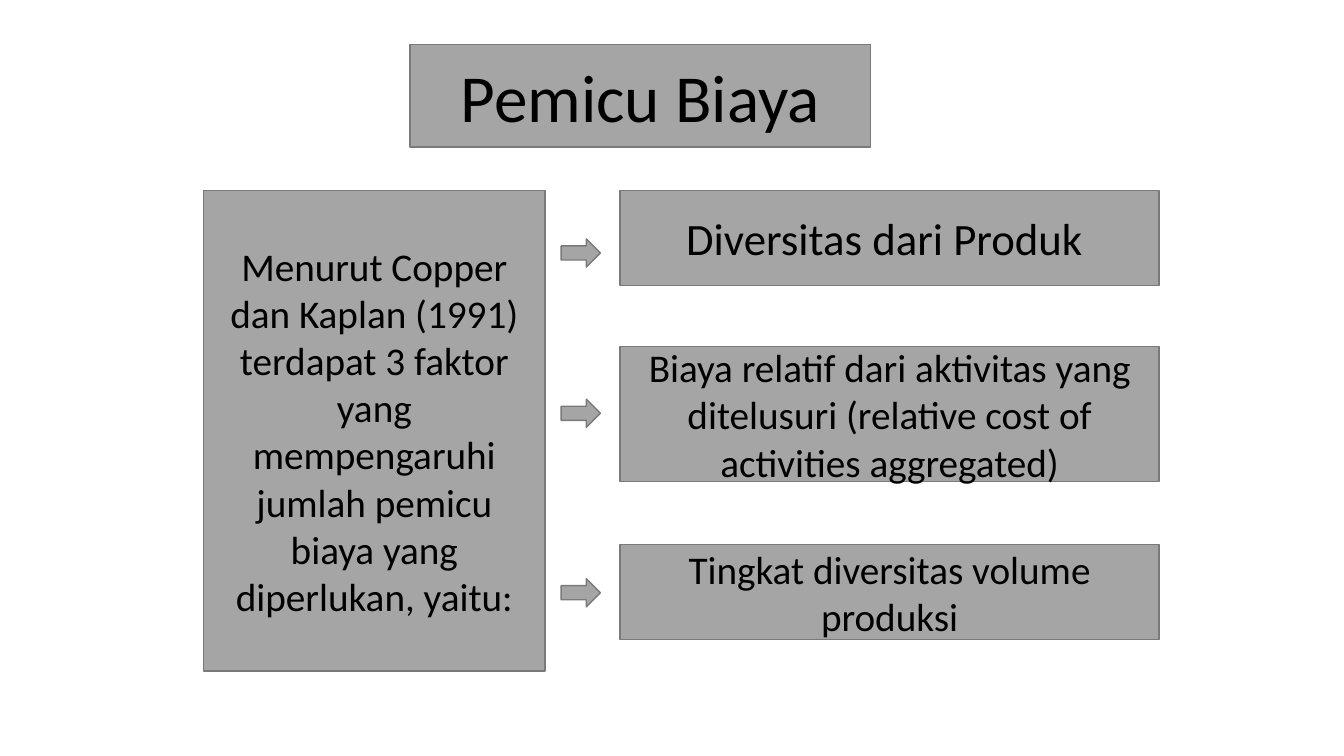
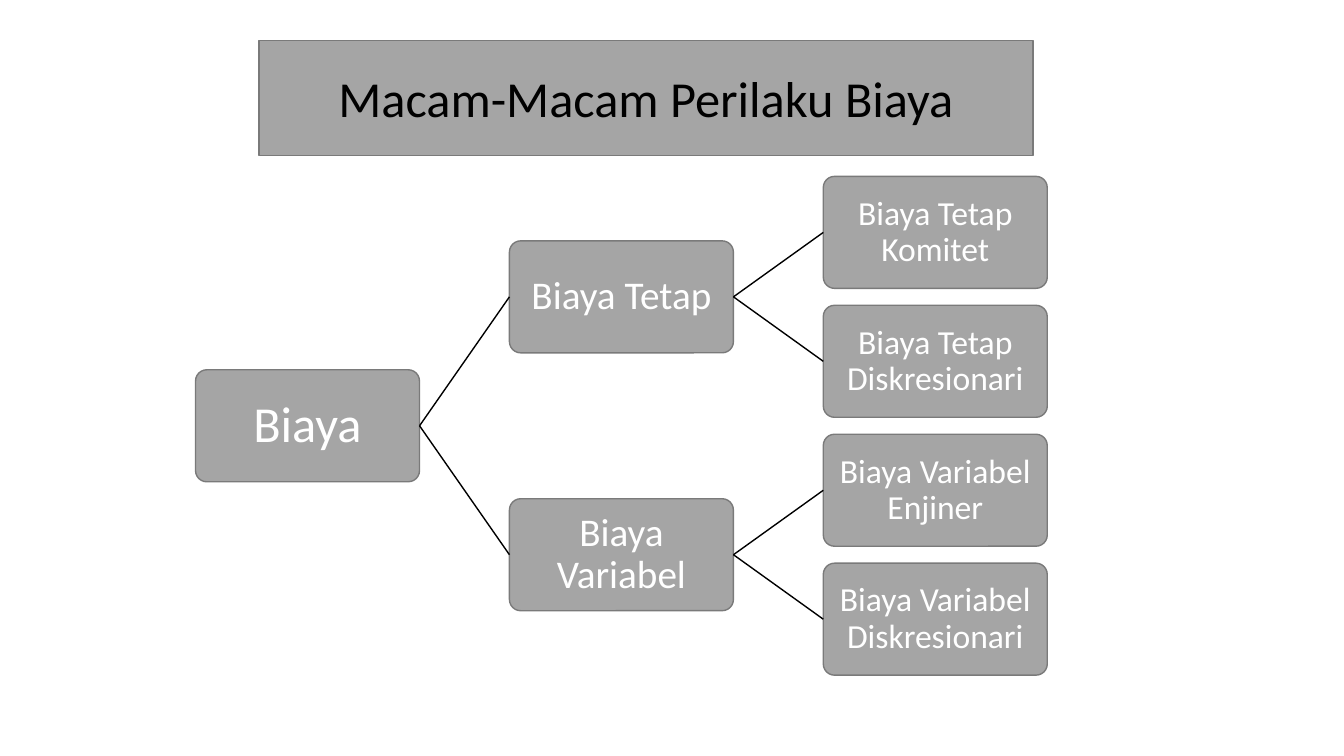
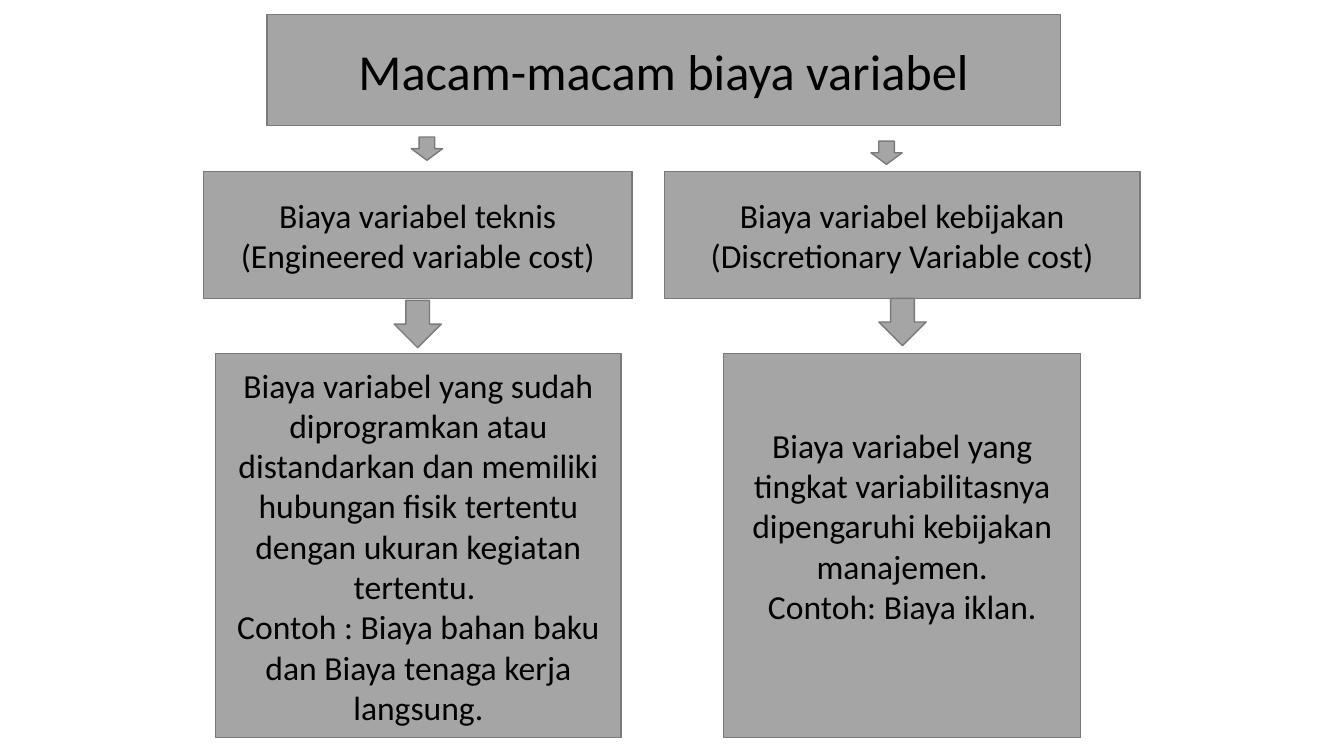
from lxml.etree import SubElement
from pptx import Presentation
from pptx.dml.color import RGBColor
from pptx.enum.shapes import MSO_CONNECTOR as LINK, MSO_SHAPE as FORM
from pptx.enum.text import MSO_ANCHOR as ANCHOR, MSO_AUTO_SIZE as FIT, PP_ALIGN as ALIGN
from pptx.oxml.ns import qn
from pptx.util import Pt

FONT = "Calibri"
HUES = {"fill": "A5A5A5", "edge": "7A7A7A", "dark": "000000", "light": "FFFFFF"}

# Slide 1: each factor is text, size, top, height and top of its arrow
INTRO = (
    "Menurut Copper dan Kaplan (1991) terdapat 3 faktor yang mempengaruhi "
    "jumlah pemicu biaya yang diperlukan, yaitu:"
)
FACTORS = [
    ("Diversitas dari Produk ", 32, 136, 68, 170.6),
    ("Biaya relatif dari aktivitas yang ditelusuri "
     "(relative cost of activities aggregated)", 28, 247.7, 96.5, 285.1),
    ("Tingkat diversitas volume produksi", 28, 388.8, 68, 413.3),
]

# Slide 2: each node is text and children
TREE = ("Biaya", [
    ("Biaya Tetap", [
        ("Biaya Tetap Komitet", []),
        ("Biaya Tetap Diskresionari", []),
    ]),
    ("Biaya Variabel", [
        ("Biaya Variabel Enjiner", []),
        ("Biaya Variabel Diskresionari", []),
    ]),
])
SIZES = [36, 28, 24]
NODE_W, NODE_H = 160, 80
TREE_X, TREE_Y = 139.7, 126
COL_STEP, ROW_STEP = 224.2, 92.1

# Slide 3: left and width of head and body, left and top of both arrows
KINDS = [
    {
        "head": "Biaya variabel teknis (Engineered variable cost)",
        "body": ["Biaya variabel yang sudah diprogramkan atau distandarkan dan "
                 "memiliki hubungan fisik tertentu dengan ukuran kegiatan tertentu. ",
                 "Contoh : Biaya bahan baku dan Biaya tenaga kerja langsung."],
        "head_x": (145.4, 306), "body_x": (154.1, 289.4), "foot": 3.6,
        "small": (293.8, 97.9), "big": (281.5, 214.6),
    },
    {
        "head": "Biaya variabel kebijakan (Discretionary Variable cost)",
        "body": ["Biaya variabel yang tingkat variabilitasnya dipengaruhi "
                 "kebijakan manajemen.",
                 "Contoh: Biaya iklan."],
        "head_x": (474.5, 339.8), "body_x": (517, 254.9), "foot": 32.9,
        "small": (622.1, 100.8), "big": (627.8, 213.1),
    },
]


def hue(name):
    return RGBColor.from_string(HUES[name])


def write(shape, text, size=24, color="dark", space=1.0, inset=None, foot=None):
    """Fill a shape with centred text; a list gives several paragraphs."""
    frame = shape.text_frame
    frame.word_wrap = True
    frame.auto_size = FIT.NONE
    frame.vertical_anchor = ANCHOR.MIDDLE
    if inset is not None:
        frame.margin_left = frame.margin_right = Pt(inset)
        frame.margin_top = frame.margin_bottom = Pt(inset)
    if foot is not None:
        frame.margin_bottom = Pt(foot)
    lines = [text] if isinstance(text, str) else text
    for i, line in enumerate(lines):
        para = frame.add_paragraph() if i else frame.paragraphs[0]
        para.alignment = ALIGN.CENTER
        para.line_spacing = space
        run = para.add_run()
        run.text = line
        run.font.name = FONT
        run.font.size = Pt(size)
        run.font.color.rgb = hue(color)


def paint(shape):
    shape.fill.solid()
    shape.fill.fore_color.rgb = hue("fill")
    shape.line.color.rgb = hue("edge")
    shape.line.width = Pt(1)


def block(slide, form, *box):
    shape = slide.shapes.add_shape(form, *map(Pt, box))
    shape.shadow.inherit = False
    paint(shape)
    return shape


def start(deck, text, size, *box):
    """Add a slide with its title in a grey band."""
    slide = deck.slides.add_slide(deck.slide_layouts[5])
    title = slide.shapes.title
    title.left, title.top, title.width, title.height = map(Pt, box)
    paint(title)
    write(title, text, size=size)
    return slide


def join(slide, left, right):
    """Link the right side of one node to the left side of another."""
    line = slide.shapes.add_connector(LINK.STRAIGHT, 0, 0, 0, 0)
    line.begin_connect(left, 3)
    line.end_connect(right, 1)
    line.line.color.rgb = hue("dark")
    line.line.width = Pt(1)
    SubElement(line.element.spPr, qn("a:effectLst"))


def grow(slide, node, depth=0, row=0):
    """Draw a node and its branches; return its shape, row and leaf count."""
    text, kids = node
    limbs, leaves = [], 0
    for kid in kids:
        limb, mid, count = grow(slide, kid, depth + 1, row + leaves)
        limbs.append((limb, mid))
        leaves += count
    if limbs:
        row = sum(mid for _, mid in limbs) / len(limbs)
    shape = block(slide, FORM.ROUNDED_RECTANGLE, TREE_X + depth * COL_STEP,
                  TREE_Y + row * ROW_STEP, NODE_W, NODE_H)
    shape.adjustments[0] = 0.1
    write(shape, text, size=SIZES[depth], color="light", space=0.9, inset=3.6)
    for limb, _ in limbs:
        join(slide, shape, limb)
    return shape, row, max(leaves, 1)


def drivers(deck):
    slide = start(deck, "Pemicu Biaya", 48, 293, 31.7, 329, 73.4)
    write(block(slide, FORM.RECTANGLE, 145.4, 136, 244, 343.4), INTRO, size=28)
    for text, size, top, high, tip in FACTORS:
        write(block(slide, FORM.RECTANGLE, 443, top, 384.8, high), text, size=size)
        block(slide, FORM.RIGHT_ARROW, 400.8, tip, 28.1, 20.2)


def costs(deck):
    slide = start(deck, "Macam-Macam Perilaku Biaya", 36, 185, 28.8, 553, 82.1)
    grow(slide, TREE)


def kinds(deck):
    slide = start(deck, "Macam-macam biaya variabel", 36, 190.8, 10.4, 566.6, 79.2)
    for kind in KINDS:
        left, wide = kind["head_x"]
        write(block(slide, FORM.RECTANGLE, left, 122.4, wide, 90.7), kind["head"])
        left, wide = kind["body_x"]
        body = block(slide, FORM.RECTANGLE, left, 252.7, wide, 274.3)
        write(body, kind["body"], foot=kind["foot"])
        block(slide, FORM.DOWN_ARROW, *kind["small"], 22.3, 16.6)
        block(slide, FORM.DOWN_ARROW, *kind["big"], 33.8, 33.8)


def main():
    deck = Presentation()
    deck.slide_width, deck.slide_height = Pt(960), Pt(540)
    for build in (drivers, costs, kinds):
        build(deck)
    deck.save("out.pptx")


if __name__ == "__main__":
    main()
